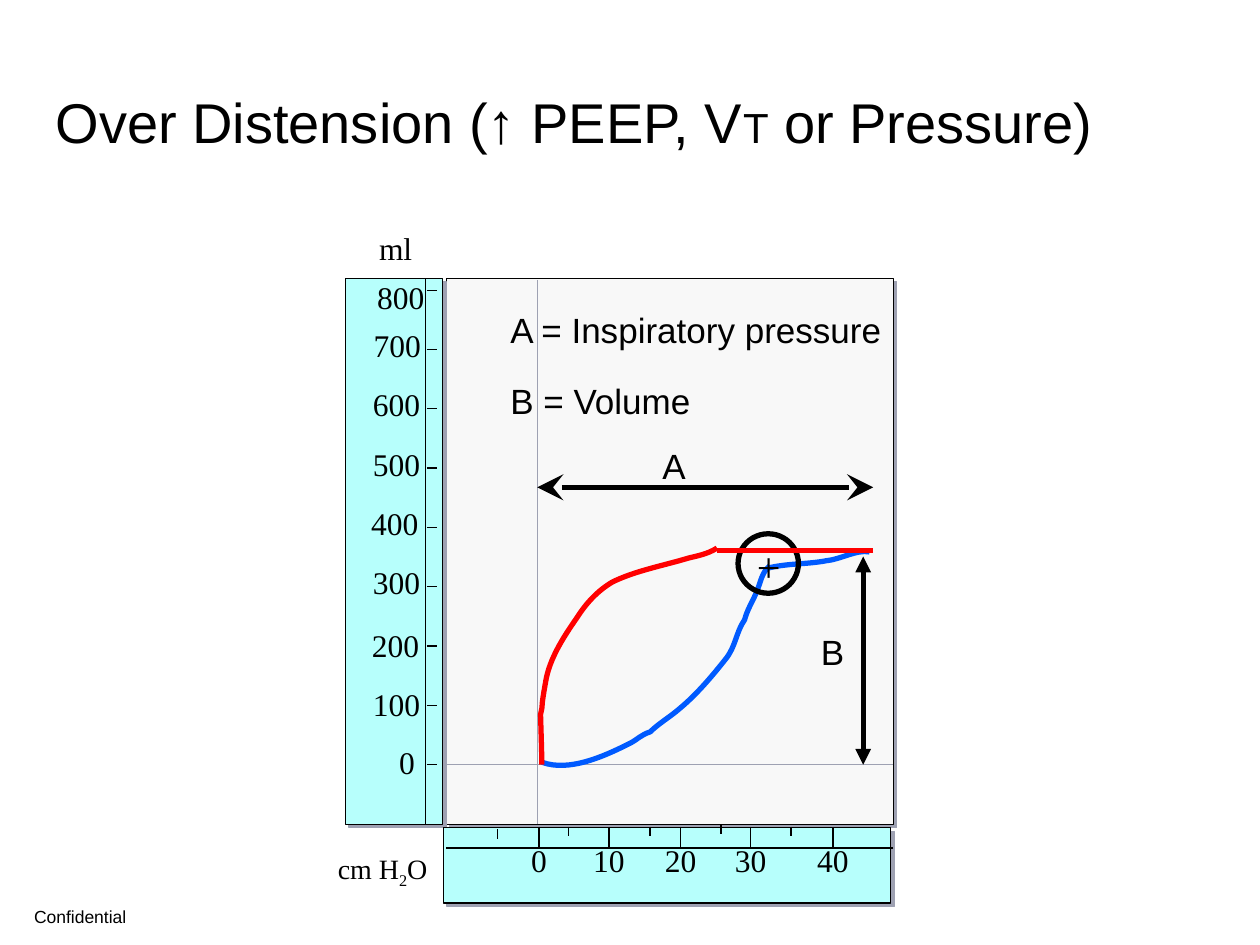
from lxml import etree
from pptx import Presentation
from pptx import util as u
from pptx.dml.color import RGBColor
from pptx.enum import shapes, text
from pptx.oxml import ns

COLOURS = {
    "ink": "000000",
    "plot": "F8F8F8",
    "scale": "B7FFFC",
    "grid": "9EA1B2",
    "inspiration": "005AFF",
    "expiration": "FF0000",
}
SERIF = {"name": "Times New Roman", "size": u.Pt(18)}
SANS = {"name": "Arial", "size": u.Pt(20)}

# Value, left and top of each volume label
VOLUME_LABELS = [
    ("0", 221, 421), ("100", 206, 388), ("200", 205.5, 354),
    ("300", 206, 318), ("400", 205, 284.5), ("500", 206, 250.5),
    ("600", 206, 216.5), ("700", 206.5, 183), ("800", 208.5, 155.5),
]
PRESSURE_TICKS = {"0": 308, "10": 348, "20": 389, "30": 429, "40": 476}
MINOR_TICKS = [(284.5, 474), (325, 472.5), (371.5, 472.5), (412, 471), (452, 472.5)]

# Each curve is a start point followed by cubic segments
UPPER_INSPIRATION = [
    (438.5, 324.7),
    (450, 321.8), (460.8, 322.6), (472.3, 320.4),
    (480.2, 319.7), (489.6, 313.9), (496.8, 315.4),
]
LOWER_INSPIRATION = [
    (309.6, 435.6),
    (325.4, 441.4), (345.6, 432), (360, 424.8),
    (364.3, 422.6), (366.5, 419.8), (371.5, 418.3),
    (376.6, 413.3), (383, 409.7), (388.8, 404.6),
    (398.2, 396.7), (406.8, 386.6), (414.7, 376.6),
    (420.5, 369.4), (420.5, 361.4), (425.5, 354.2),
    (427, 348.5), (429.8, 344.2), (432, 339.1),
    (434.9, 332.6), (434.9, 327.6), (439.9, 323.3),
]
EXPIRATION = [
    (409.7, 313.2),
    (403.9, 316.8), (398.9, 317.5), (393.1, 319),
    (378.7, 323.3), (362.9, 326.2), (349.9, 332.6),
    (341.3, 337.7), (334.8, 344.9), (329.8, 352.8),
    (321.8, 364.3), (313.9, 376.6), (311.8, 389.5),
    (308.2, 409.7), (311, 398.9), (308.9, 408.2),
    (309.2, 420), (309.6, 430), (309.6, 437),
]


def colour(name):
    return RGBColor.from_string(COLOURS[name])


def add_effects(shape, shadow=False):
    """Write an effect list: empty, or with the hard offset shadow."""
    effects = etree.SubElement(shape._element.spPr, ns.qn("a:effectLst"))
    if shadow:
        outer = etree.SubElement(effects, ns.qn("a:outerShdw"), blurRad="0",
                                 dist=str(u.Pt(2.8)), dir="2700000", algn="ctr",
                                 rotWithShape="0")
        etree.SubElement(outer, ns.qn("a:srgbClr"), val=COLOURS["grid"])


def format_line(shape, line_colour, width):
    shape.line.color.rgb = colour(line_colour)
    shape.line.width = u.Pt(width)


def format_font(font, values):
    for name, value in values.items():
        setattr(font, name, value)
    font.color.rgb = colour("ink")


def add_panel(slide, box, fill):
    panel = slide.shapes.add_shape(shapes.MSO_SHAPE.RECTANGLE, *map(u.Pt, box))
    panel.fill.solid()
    panel.fill.fore_color.rgb = colour(fill)
    format_line(panel, "ink", 0.75)
    add_effects(panel, shadow=True)


def add_line(slide, start, end, line_colour="ink", width=0.75, arrow=None, arrow_size="med"):
    line = slide.shapes.add_connector(
        shapes.MSO_CONNECTOR.STRAIGHT, *map(u.Pt, (*start, *end)))
    format_line(line, line_colour, width)
    if arrow:
        for end_name in ("a:headEnd", "a:tailEnd"):
            etree.SubElement(line.line._get_or_add_ln(), ns.qn(end_name),
                             type=arrow, w=arrow_size, len=arrow_size)
    add_effects(line)


def add_curve(slide, points, line_colour):
    """Draw an open outline, joining each three points into a cubic segment."""
    builder = slide.shapes.build_freeform(*map(u.Pt, points[0]))
    builder.add_line_segments([tuple(map(u.Pt, point)) for point in points[1:]], close=False)
    curve = builder.convert_to_shape()
    segments = curve._element.findall(".//" + ns.qn("a:lnTo"))
    for first in range(0, len(segments), 3):
        cubic = etree.Element(ns.qn("a:cubicBezTo"))
        segments[first].addprevious(cubic)
        for segment in segments[first:first + 3]:
            cubic.append(segment[0])
            segment.getparent().remove(segment)
    curve.shadow.inherit = False
    curve.fill.background()
    format_line(curve, line_colour, 3)


def add_text(slide, box, paragraphs, font, wrap=False, margins=None, **layout):
    """Add a text box; layout holds paragraph format values."""
    shape = slide.shapes.add_textbox(*map(u.Pt, box))
    frame = shape.text_frame
    frame.word_wrap = wrap
    if margins is not None:
        for side in ("left", "top", "right", "bottom"):
            setattr(frame, f"margin_{side}", u.Pt(margins))
    frame.text = "\n".join(paragraphs)
    for paragraph in frame.paragraphs:
        for name, value in layout.items():
            setattr(paragraph, name, value)
        for run in paragraph.runs:
            format_font(run.font, font)
    return frame


def add_title(slide):
    title = slide.shapes.title
    box = {"left": 24.5, "top": 46.5, "width": 648, "height": 90}
    for name, value in box.items():
        setattr(title, name, u.Pt(value))
    frame = title.text_frame
    frame.vertical_anchor = text.MSO_ANCHOR.TOP
    paragraph = frame.paragraphs[0]
    paragraph.alignment = text.PP_ALIGN.LEFT
    for words, size in (("Over Distension (↑ PEEP, V", 32), ("T", 24),
                        (" or Pressure)", 32)):
        run = paragraph.add_run()
        run.text = words
        format_font(run.font, {"name": "Arial", "size": u.Pt(size)})


def add_volume_scale(slide):
    add_panel(slide, (197.5, 159, 55.5, 312), "scale")
    add_text(slide, (209.5, 127.5, 34, 29), ["ml"], SERIF)
    add_line(slide, (243.25, 159), (243.25, 471))
    for index, (value, left, top) in enumerate(VOLUME_LABELS):
        add_text(slide, (left, top, 24 if value == "0" else 42, 29), [value], SERIF)
        tick = 437 - 33.9 * index
        add_line(slide, (244, tick), (249.5, tick))


def add_pressure_scale(slide):
    add_panel(slide, (253.5, 473, 255.5, 43), "scale")
    add_line(slide, (255, 484.5), (510.5, 484.5))
    for value, tick in PRESSURE_TICKS.items():
        width = 24 if value == "0" else 33
        add_text(slide, (tick - width / 2, 480.5, width, 29), [value], SERIF,
                 alignment=text.PP_ALIGN.CENTER, margins=0)
        add_line(slide, (tick, 472.5), (tick, 484))
    for tick, top in MINOR_TICKS:
        add_line(slide, (tick, top), (tick, top + 5.5))
    unit = add_text(slide, (186, 483, 67, 27), ["cm H"], {**SERIF, "size": u.Pt(16)})
    for letter, baseline in (("2", "-25000"), ("O", "0")):
        run = unit.paragraphs[0].add_run()
        run.text = letter
        format_font(run.font, {**SERIF, "size": u.Pt(16)})
        run.font._element.set("baseline", baseline)


def add_loop(slide):
    add_curve(slide, UPPER_INSPIRATION, "inspiration")
    add_curve(slide, LOWER_INSPIRATION, "inspiration")
    add_text(slide, (425.5, 305.5, 27.5, 36), ["+"], {**SERIF, "size": u.Pt(24)}, wrap=True)
    ring = slide.shapes.add_shape(shapes.MSO_SHAPE.OVAL, *map(u.Pt, (421.75, 305, 34.5, 34)))
    ring.shadow.inherit = False
    ring.fill.background()
    format_line(ring, "ink", 3)
    add_line(slide, (499, 314.5), (409.5, 314.5), "expiration", 3)
    add_curve(slide, EXPIRATION, "expiration")


def main():
    presentation = Presentation()
    presentation.slide_width, presentation.slide_height = u.Pt(720), u.Pt(540)
    slide = presentation.slides.add_slide(presentation.slide_layouts[5])
    add_title(slide)
    add_text(slide, (19.5, 517.5, 145, 12.5), ["Confidential"],
             {**SANS, "size": u.Pt(10)}, wrap=True, margins=0)
    add_panel(slide, (255, 159, 255.5, 312), "plot")
    add_volume_scale(slide)
    add_line(slide, (307.25, 160), (307.25, 471), "grid")
    add_line(slide, (255, 437), (510.5, 437), "grid")
    add_text(slide, (462, 356.5, 28, 31), ["B"], SANS)
    add_text(slide, (371.5, 250.5, 28, 31), ["A"], SANS)
    add_line(slide, (307, 278.5), (499, 278.5), width=3, arrow="stealth", arrow_size="lg")
    legend = add_text(slide, (284.5, 179.5, 244, 57.5),
                      ["A = Inspiratory pressure", "B = Volume"], SANS,
                      wrap=True, line_spacing=0.7)
    legend.paragraphs[1].space_before = u.Pt(23.5)
    add_line(slide, (493.25, 318), (493.25, 437), width=3, arrow="triangle")
    add_pressure_scale(slide)
    add_loop(slide)
    presentation.save("out.pptx")


if __name__ == "__main__":
    main()
